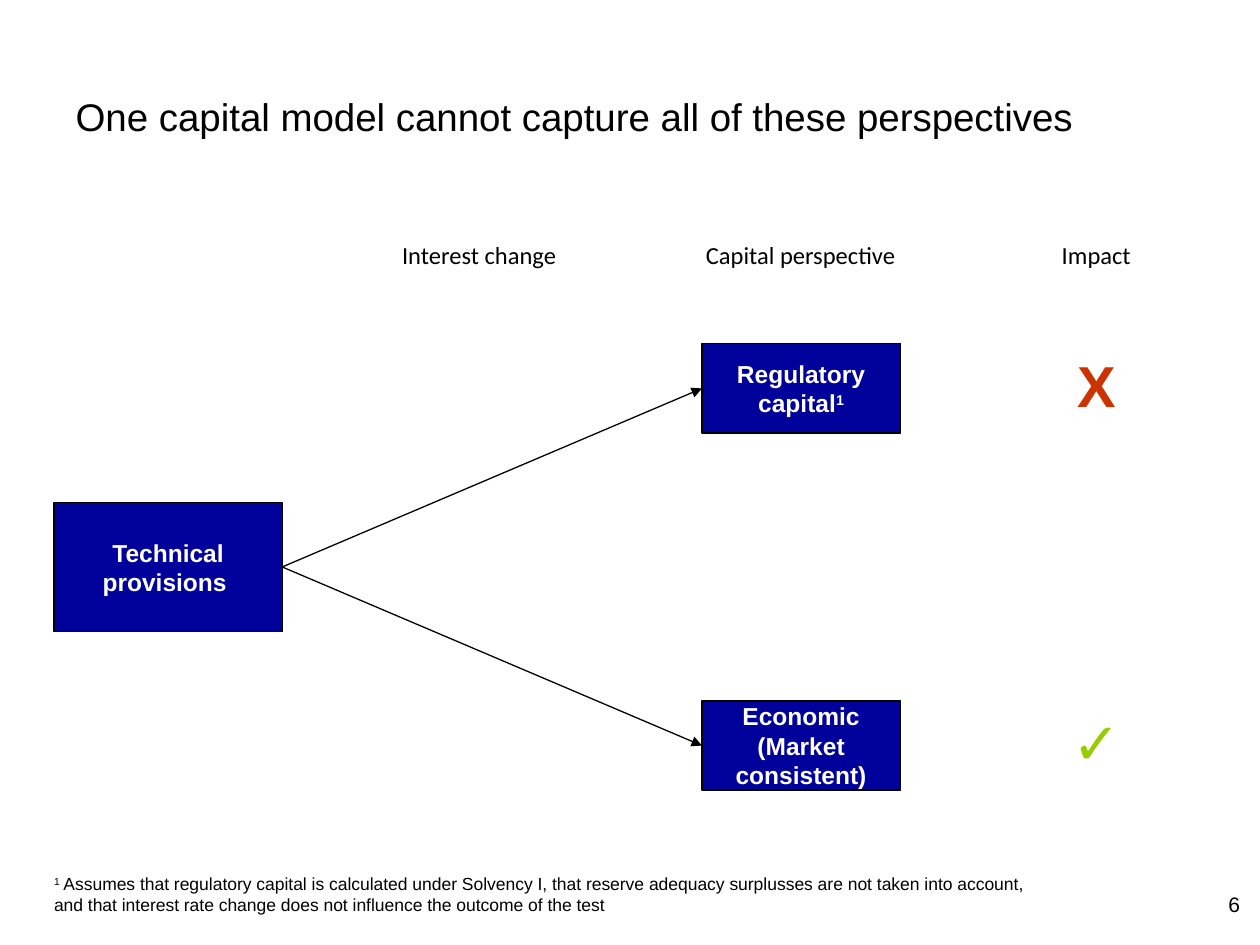
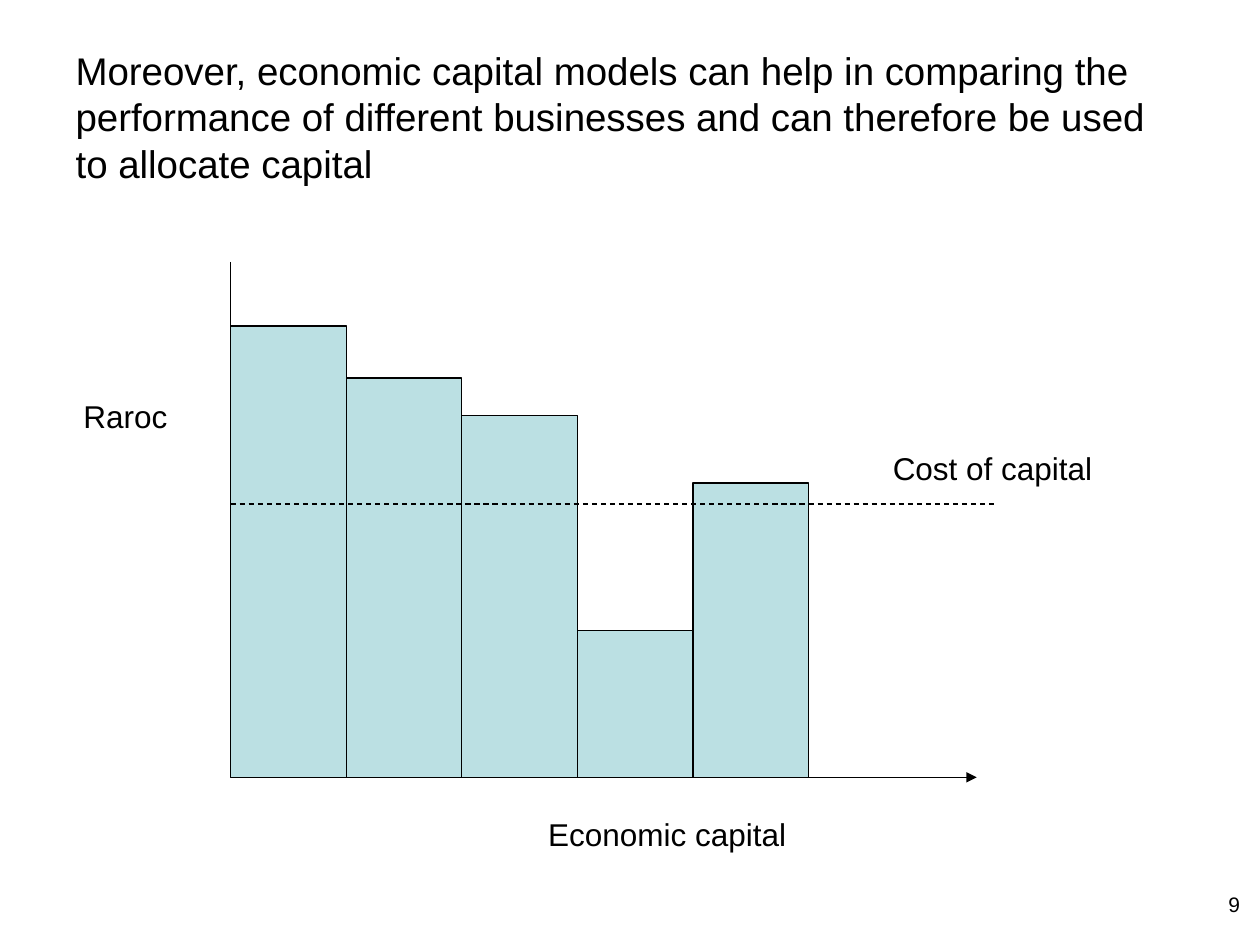
"""Build two slides on capital perspectives and on capital allocation."""
from lxml import etree
from pptx import Presentation
from pptx.dml.color import RGBColor
from pptx.enum import dml, shapes, text
from pptx.oxml.ns import qn
from pptx.util import Cm, Pt

HUES = {"ink": "000000", "paper": "FFFFFF", "navy": "00009A",
        "aqua": "BBE0E3", "red": "CC3300", "lime": "99CC00"}
MID, LEFT, RIGHT = text.PP_ALIGN.CENTER, text.PP_ALIGN.LEFT, text.PP_ALIGN.RIGHT
RECT = shapes.MSO_SHAPE.RECTANGLE


def write(shape, *runs, size=14, font="Arial", hue="ink", bold=False, align=MID,
          anchor=text.MSO_ANCHOR.TOP, wrap=True, inset=None, pitch=None):
    """Fill a shape with runs of text; a run that starts with ^ is raised."""
    frame = shape.text_frame
    frame.word_wrap = wrap
    frame.auto_size = text.MSO_AUTO_SIZE.NONE
    frame.vertical_anchor = anchor
    if inset is not None:
        frame.margin_left = frame.margin_right = inset
        frame.margin_top = frame.margin_bottom = inset
    para = frame.paragraphs[0]
    para.alignment = align
    if pitch:
        para.line_spacing = pitch
    for words in runs:
        run = para.add_run()
        run.text = words.lstrip("^")
        run.font.size, run.font.name, run.font.bold = Pt(size), font, bold
        run.font.color.rgb = RGBColor.from_string(HUES[hue])
        if words.startswith("^"):
            run._r.get_or_add_rPr().set("baseline", "30000")


def draw(slide, x1, y1, x2, y2, arrow=False, dash=False):
    """Draw a thin black line, with an arrowhead or dashes on request."""
    line = slide.shapes.add_connector(
        shapes.MSO_CONNECTOR.STRAIGHT, Cm(x1), Cm(y1), Cm(x2), Cm(y2))
    line.line.width = Pt(0.75)
    line.line.color.rgb = RGBColor.from_string(HUES["ink"])
    if dash:
        line.line.dash_style = dml.MSO_LINE.DASH
    if arrow:
        etree.SubElement(line.line._get_or_add_ln(), qn("a:tailEnd"), type="triangle")
    etree.SubElement(line._element.spPr, qn("a:effectLst"))
    return line


deck = Presentation()
deck.slide_width, deck.slide_height = Cm(25.4), Cm(19.05)

pages = []
for number, title in [
    ("6", "One capital model cannot capture all of these perspectives"),
    ("9", "Moreover, economic capital models can help in comparing the performance "
          "of different businesses and can therefore be used to allocate capital"),
]:
    page = deck.slides.add_slide(deck.slide_layouts[5])
    head = page.shapes.title
    head.left, head.top, head.width, head.height = Cm(1.27), Cm(0.76), Cm(22.86), Cm(3.18)
    write(head, title, size=22, align=LEFT, anchor=text.MSO_ANCHOR.MIDDLE)
    folio = page.shapes.add_textbox(Cm(24.2), Cm(17.98), Cm(0.8), Cm(0.51))
    write(folio, number, size=12, align=RIGHT, wrap=False, inset=0)
    pages.append(page)
model, growth = pages

boxes = []
for x, y, wide, high, runs in [
    (1.09, 11.43, 4.6, 2.6, ["Technical provisions "]),
    (14.15, 7.83, 4, 1.8, ["Regulatory capital", "^1"]),
    (14.15, 15.03, 4, 1.8, ["Economic (Market consistent)"]),
]:
    box = model.shapes.add_shape(RECT, Cm(x), Cm(y - high / 2), Cm(wide), Cm(high))
    box.shadow.inherit = False
    box.fill.solid()
    box.fill.fore_color.rgb = RGBColor.from_string(HUES["navy"])
    box.line.color.rgb = RGBColor.from_string(HUES["ink"])
    box.line.width = Pt(0.75)
    write(box, *runs, hue="paper", bold=True, anchor=text.MSO_ANCHOR.MIDDLE)
    boxes.append(box)

for goal in boxes[1:]:
    arrow = draw(model, 0, 0, 1, 1, arrow=True)
    arrow.begin_connect(boxes[0], 3)
    arrow.end_connect(goal, 1)

for x, label in [(9.66, "Interest change"), (16.14, "Capital perspective"), (22.1, "Impact")]:
    cell = model.shapes.add_textbox(Cm(x - 2.5), Cm(4.72), Cm(5), Cm(0.84))
    write(cell, label, font="Calibri")

for y, sign, hue in [(7.83, "X", "red"), (15.03, "✓", "lime")]:
    mark = model.shapes.add_textbox(Cm(21.4), Cm(y - 0.75), Cm(1.4), Cm(1.5))
    write(mark, sign, size=33, hue=hue, bold=True, wrap=False, pitch=0.9,
          anchor=text.MSO_ANCHOR.MIDDLE)

note = model.shapes.add_textbox(Cm(0.84), Cm(17.48), Cm(20.52), Cm(1.1))
write(note, "^1", " Assumes that regulatory capital is calculated under Solvency I, that "
      "reserve adequacy surplusses are not taken into account, and that interest rate "
      "change does not influence the outcome of the test", size=10, align=LEFT)

start, base, step = 4.65, 15.67, 2.33
draw(growth, start, 5.28, start, base)
draw(growth, start, base, 19.69, base, arrow=True)
for i, high in enumerate([9.1, 8.05, 7.3, 2.96, 5.93]):
    bar = growth.shapes.add_shape(
        RECT, Cm(start + i * step), Cm(base - high), Cm(step), Cm(high))
    bar.shadow.inherit = False
    bar.fill.solid()
    bar.fill.fore_color.rgb = RGBColor.from_string(HUES["aqua"])
    bar.line.color.rgb = RGBColor.from_string(HUES["ink"])
    bar.line.width = Pt(0.75)
draw(growth, start, 10.16, 20.11, 10.16, dash=True)

for x, y, wide, label in [(0.84, 7.87, 3.38, "Raroc"),
                          (10.59, 16.3, 5.72, "Economic capital"),
                          (17.15, 8.92, 5.72, "Cost of capital")]:
    tag = growth.shapes.add_textbox(Cm(x), Cm(y), Cm(wide), Cm(1.02))
    write(tag, label, size=18)

deck.save("out.pptx")
